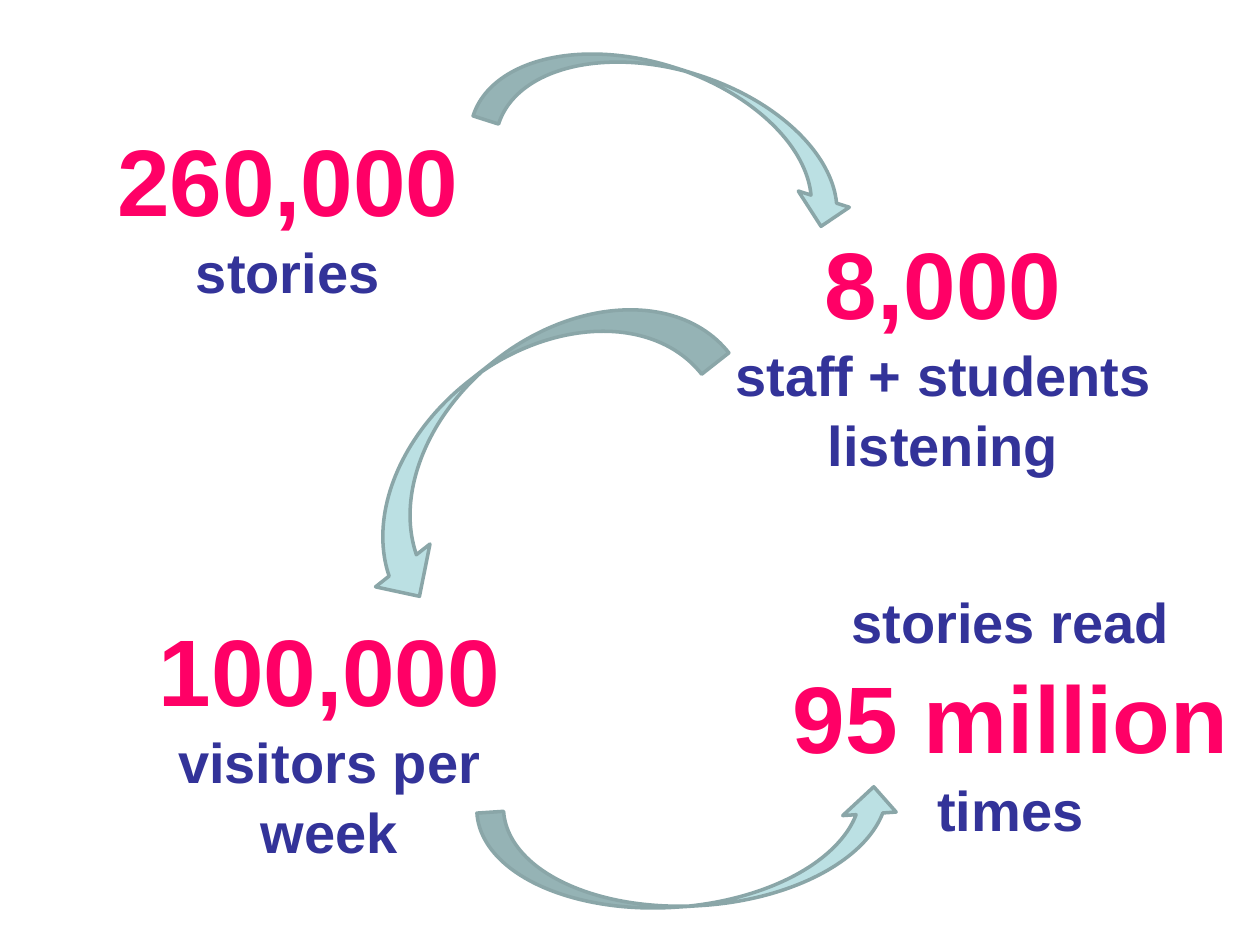
from pptx import Presentation
from pptx.dml.color import RGBColor
from pptx.enum.shapes import MSO_SHAPE
from pptx.enum.text import MSO_AUTO_SIZE, PP_ALIGN
from pptx.util import Pt

PINK = RGBColor(0xFF, 0x00, 0x66)
NAVY = RGBColor(0x33, 0x33, 0x99)
AQUA = RGBColor(0xBB, 0xE0, 0xE3)
TEAL = RGBColor(0x8A, 0xA6, 0xA8)

BIG = dict(size=54, color=PINK)
SMALL = dict(size=32, color=NAVY)

# Box (left, top, width, height) and lines of each fact
FACTS = [
    ((42.5, 63.4, 244, 111.6), [("260,000", BIG), ("stories", SMALL)]),
    ((66.2, 343.4, 244, 150.5), [("100,000", BIG), ("visitors per week", SMALL)]),
    ((443.5, 330.5, 267.8, 150.5),
     [("stories read", SMALL), ("95 million", BIG), ("times", SMALL)]),
    ((377.3, 122.4, 323.3, 150.5),
     [("8,000", BIG), ("staff + students listening", SMALL)]),
]

# Box, turn in degrees and flip of each arrow
ARROWS = [
    ((355.7, -41, 61.2, 223.9), 287.6, None),
    ((365, 365.8, 61.2, 242.6), 86.2, "flipV"),
    ((256.3, 123.8, 79.2, 244.8), 51.8, "flipH"),
]


def write(para, text, size, color, font="Arial", bold=True):
    para.alignment = PP_ALIGN.CENTER
    para.line_spacing = 1.04
    run = para.add_run()
    run.text = text
    run.font.name = font
    run.font.size = Pt(size)
    run.font.bold = bold
    run.font.color.rgb = color


def add_fact(slide, box, lines):
    frame = slide.shapes.add_textbox(*map(Pt, box)).text_frame
    frame.word_wrap = True
    frame.auto_size = MSO_AUTO_SIZE.SHAPE_TO_FIT_TEXT
    for i, (text, style) in enumerate(lines):
        para = frame.add_paragraph() if i else frame.paragraphs[0]
        write(para, text, **style)


def add_arrow(slide, box, turn, flip):
    arrow = slide.shapes.add_shape(MSO_SHAPE.CURVED_LEFT_ARROW, *map(Pt, box))
    arrow.rotation = turn
    arrow.shadow.inherit = False
    arrow.fill.solid()
    arrow.fill.fore_color.rgb = AQUA
    arrow.line.color.rgb = TEAL
    arrow.line.width = Pt(2)
    if flip:
        arrow.element.spPr.xfrm.set(flip, "1")


def main():
    deck = Presentation()
    deck.slide_width, deck.slide_height = Pt(720), Pt(540)
    slide = deck.slides.add_slide(deck.slide_layouts[6])
    for fact in FACTS:
        add_fact(slide, *fact)
    for arrow in ARROWS:
        add_arrow(slide, *arrow)
    deck.save("out.pptx")


if __name__ == "__main__":
    main()
